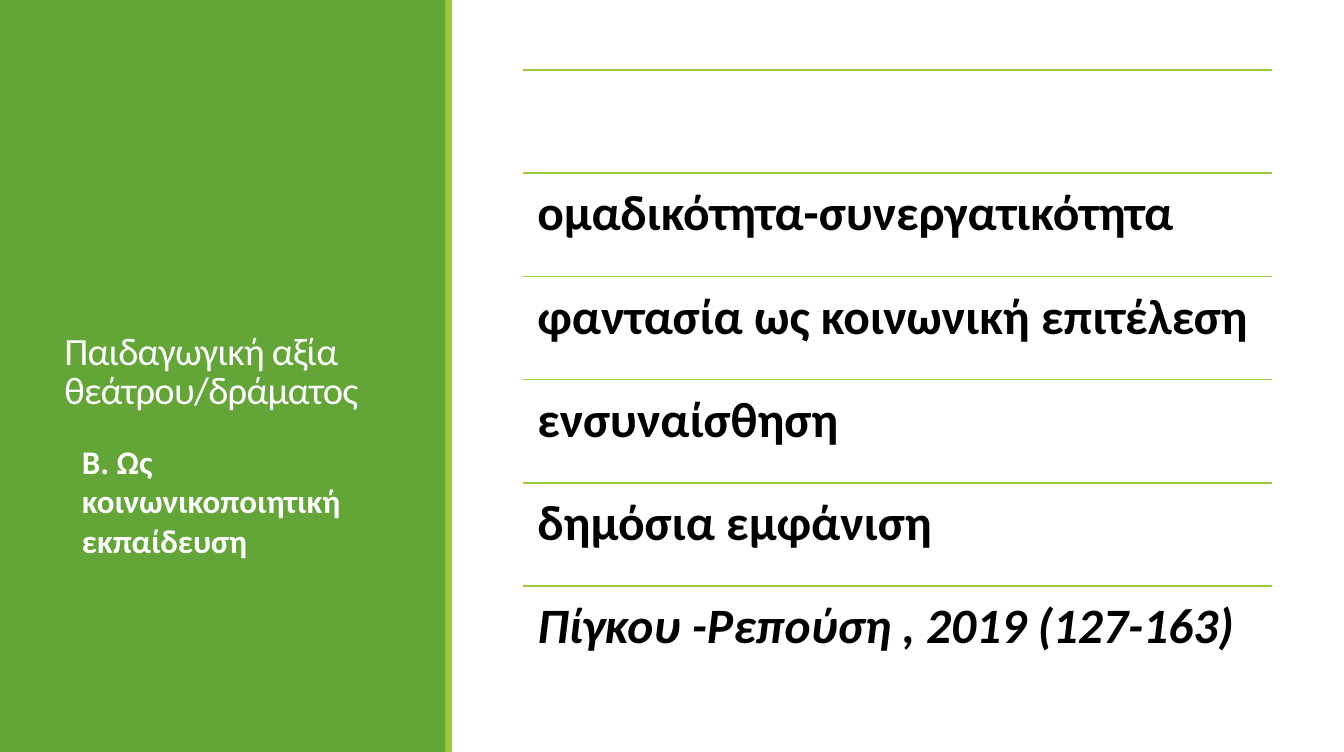
from dataclasses import dataclass

import pptx
import pptx.dml.color
import pptx.enum.shapes
import pptx.enum.text
import pptx.oxml.ns
import pptx.util
from lxml import etree

Inches = pptx.util.Inches
Pt = pptx.util.Pt

COLORS = {"panel": "63A537", "accent": "99CB38", "light": "FFFFFF", "dark": "000000"}
FONT = "Calibri"
SLIDE_W, SLIDE_H = 13.58, 7.6
LIST_LEFT, LIST_W = 5.28, 7.57
LIST_TOP, LAST_TOP = 0.71, 5.92


@dataclass
class Item:
    text: str = ""
    italic: bool = False


@dataclass
class Band:
    left: float
    width: float
    color: str


ITEMS = [
    Item(),
    Item("ομαδικότητα-συνεργατικότητα"),
    Item("φαντασία ως κοινωνική επιτέλεση"),
    Item("ενσυναίσθηση"),
    Item("δημόσια εμφάνιση"),
    Item("Πίγκου -Ρεπούση , 2019 (127-163)", italic=True),
]
BANDS = [Band(0, 4.51, "panel"), Band(4.5, 0.07, "accent")]
PITCH = (LAST_TOP - LIST_TOP) / (len(ITEMS) - 1)


def rgb(name: str) -> pptx.dml.color.RGBColor:
    return pptx.dml.color.RGBColor.from_string(COLORS[name])


def style(p, size: float, color: str, bold: bool = False, italic: bool = False) -> None:
    p.font.name = FONT
    p.font.size = Pt(size)
    p.font.bold = bold
    p.font.italic = italic
    p.font.color.rgb = rgb(color)


def add_band(s, band: Band) -> None:
    sp = s.shapes.add_shape(
        pptx.enum.shapes.MSO_SHAPE.RECTANGLE,
        Inches(band.left), 0, Inches(band.width), Inches(SLIDE_H),
    )
    sp.shadow.inherit = False
    sp.fill.solid()
    sp.fill.fore_color.rgb = rgb(band.color)
    sp.line.fill.background()
    s.shapes.title.element.addprevious(sp.element)


def add_rule(s, top: float) -> None:
    line = s.shapes.add_connector(
        pptx.enum.shapes.MSO_CONNECTOR.STRAIGHT,
        Inches(LIST_LEFT), Inches(top), Inches(LIST_LEFT + LIST_W), Inches(top),
    )
    line.line.color.rgb = rgb("accent")
    line.line.width = Pt(1.25)
    etree.SubElement(line.element.spPr, pptx.oxml.ns.qn("a:effectLst"))


def add_text(s, text: str, left: float, top: float, width: float, height: float):
    sp = s.shapes.add_textbox(Inches(left), Inches(top), Inches(width), Inches(height))
    tf = sp.text_frame
    tf.word_wrap = True
    tf.text = text
    return tf


def add_item(s, item: Item, top: float) -> None:
    tf = add_text(s, item.text, LIST_LEFT, top, LIST_W, PITCH)
    tf.margin_left = tf.margin_right = tf.margin_top = tf.margin_bottom = Inches(0.15)
    p = tf.paragraphs[0]
    p.line_spacing = 0.9
    style(p, 36, "dark", bold=True, italic=item.italic)


def fill_title(s) -> None:
    sp = s.shapes.title
    sp.left, sp.top = Inches(0.55), Inches(0.57)
    sp.width, sp.height = Inches(3.44), Inches(6.4)
    tf = sp.text_frame
    tf.text = "Παιδαγωγική αξία θεάτρου/δράματος"
    tf.word_wrap = True
    tf.auto_size = pptx.enum.text.MSO_AUTO_SIZE.NONE
    tf.vertical_anchor = pptx.enum.text.MSO_ANCHOR.MIDDLE
    p = tf.paragraphs[0]
    p.alignment = pptx.enum.text.PP_ALIGN.LEFT
    p.line_spacing = 0.85
    style(p, 28, "light")
    p.runs[0]._r.get_or_add_rPr().set("spc", "-50")


def main() -> None:
    prs = pptx.Presentation()
    prs.slide_width, prs.slide_height = Inches(SLIDE_W), Inches(SLIDE_H)
    s = prs.slides.add_slide(prs.slide_layouts.get_by_name("Title Only"))
    s.background.fill.solid()
    s.background.fill.fore_color.rgb = rgb("light")

    for band in BANDS:
        add_band(s, band)
    fill_title(s)
    for i, item in enumerate(ITEMS):
        top = LIST_TOP + i * PITCH
        add_rule(s, top)
        if item.text:
            add_item(s, item, top)

    tf = add_text(s, "Β. Ως κοινωνικοποιητική εκπαίδευση", 0.73, 4.41, 2.9, 1.31)
    tf.auto_size = pptx.enum.text.MSO_AUTO_SIZE.SHAPE_TO_FIT_TEXT
    style(tf.paragraphs[0], 24, "light", bold=True)

    prs.save("out.pptx")


if __name__ == "__main__":
    main()
